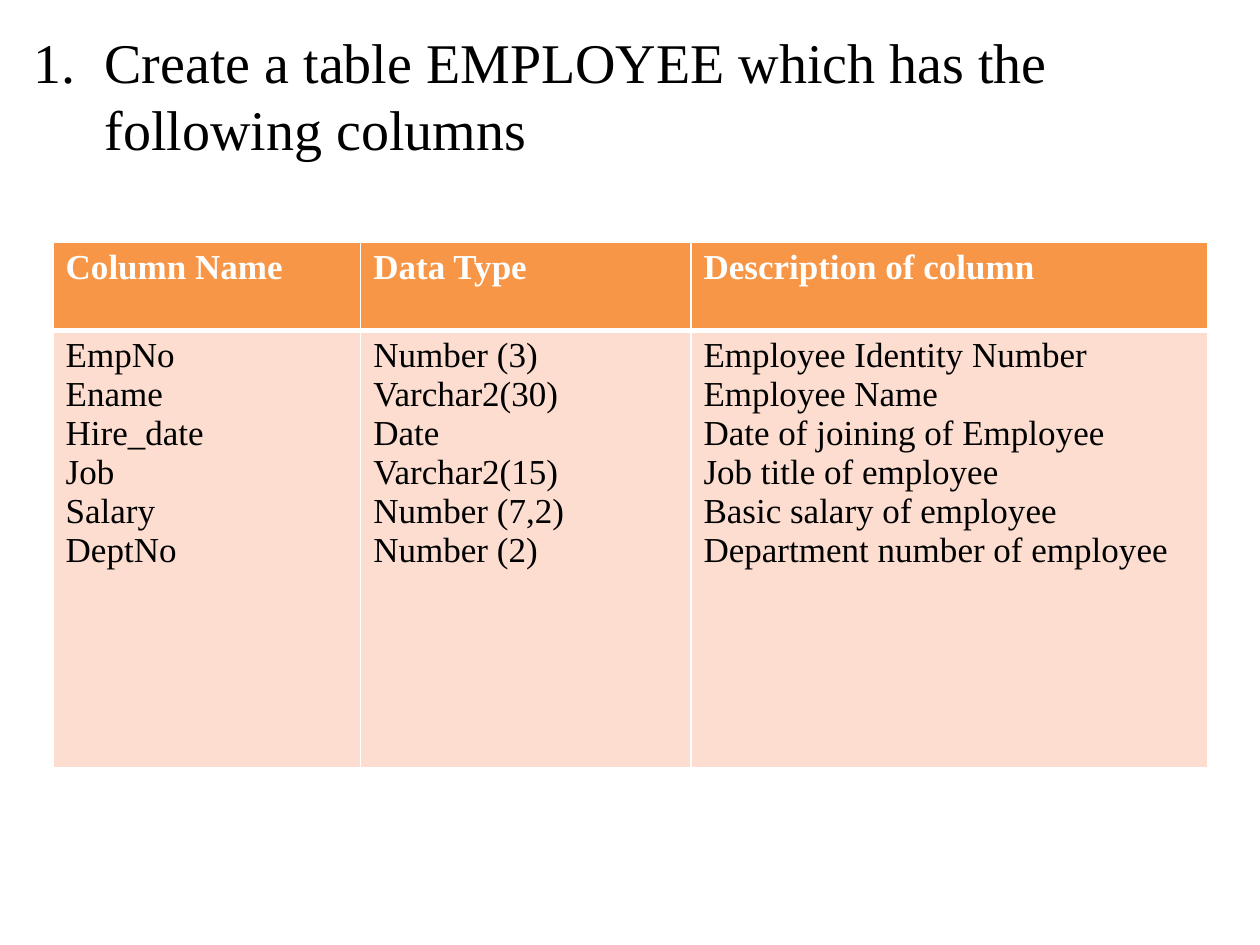
from lxml.etree import SubElement
from pptx import Presentation
from pptx.dml.color import RGBColor
from pptx.oxml.ns import qn
from pptx.util import Cm, Pt

FONT = "Times New Roman"
BLACK = RGBColor(0x00, 0x00, 0x00)
WHITE = RGBColor(0xFF, 0xFF, 0xFF)
ORANGE = RGBColor(0xF7, 0x96, 0x46)
PEACH = RGBColor(0xFC, 0xDD, 0xCF)

COLUMN_SHARES = (2.44, 2.62, 4.1)
HEADER_HEIGHT = Cm(1.78)
EMPLOYEE_COLUMNS = {
    "Column Name": ["EmpNo", "Ename", "Hire_date", "Job", "Salary", "DeptNo"],
    "Data Type": ["Number (3)", "Varchar2(30)", "Date", "Varchar2(15)",
                  "Number (7,2)", "Number (2)"],
    "Description of column": [
        "Employee Identity Number", "Employee Name",
        "Date of joining of Employee", "Job title of employee",
        "Basic salary of employee", "Department number of employee"],
}


def write_text(text_frame, lines, size=20, color=BLACK, bold=False):
    """Write one paragraph for each line."""
    for index, line in enumerate(lines):
        paragraph = text_frame.paragraphs[0] if index == 0 else text_frame.add_paragraph()
        run = paragraph.add_run()
        run.text = line
        run.font.name = FONT
        run.font.size = Pt(size)
        run.font.bold = bold
        run.font.color.rgb = color


def number_paragraph(paragraph, indent):
    """Give a paragraph an automatic number with a hanging indent."""
    properties = paragraph._p.get_or_add_pPr()
    properties.set("marL", str(indent))
    properties.set("indent", str(-indent))
    SubElement(properties, qn("a:buFont"), typeface=FONT)
    SubElement(properties, qn("a:buAutoNum"), type="arabicPeriod")


def set_borders(cell, color, bottom=1):
    """Draw the four cell borders; they precede the fill in the XML."""
    properties = cell._tc.get_or_add_tcPr()
    widths = {"a:lnL": 1, "a:lnR": 1, "a:lnT": 1, "a:lnB": bottom}
    for position, (tag, width) in enumerate(widths.items()):
        line = SubElement(properties, qn(tag), w=str(Pt(width)))
        fill = SubElement(line, qn("a:solidFill"))
        SubElement(fill, qn("a:srgbClr"), val=str(color))
        properties.insert(position, line)


def add_question(slide, left, top, width, height):
    text_box = slide.shapes.add_textbox(left, top, width, height)
    text_frame = text_box.text_frame
    text_frame.word_wrap = True
    write_text(text_frame,
               ["Create a table EMPLOYEE which has the following columns"], size=32)
    paragraph = text_frame.paragraphs[0]
    paragraph.space_before = Pt(6.4)
    number_paragraph(paragraph, Cm(1.43))


def add_column_table(slide, left, top, width, height):
    table = slide.shapes.add_table(
        2, len(EMPLOYEE_COLUMNS), left, top, width, height).table
    table.horz_banding = False
    table.rows[0].height = HEADER_HEIGHT
    table.rows[1].height = height - HEADER_HEIGHT
    for index, (heading, entries) in enumerate(EMPLOYEE_COLUMNS.items()):
        table.columns[index].width = int(width * COLUMN_SHARES[index] / sum(COLUMN_SHARES))
        header, body = table.cell(0, index), table.cell(1, index)
        write_text(header.text_frame, [heading], color=WHITE, bold=True)
        write_text(body.text_frame, entries)
        for cell, color in ((header, ORANGE), (body, PEACH)):
            cell.fill.solid()
            cell.fill.fore_color.rgb = color
        # Thick rule under the header, shared with the body cell's top edge
        set_borders(header, WHITE, bottom=3)
        set_borders(body, WHITE)
        top_line = body._tc.tcPr.find(qn("a:lnT"))
        top_line.set("w", str(Pt(3)))


def main():
    presentation = Presentation()
    presentation.slide_width, presentation.slide_height = Cm(25.4), Cm(19.05)
    slide = presentation.slides.add_slide(presentation.slide_layouts[6])
    # Numbered question
    add_question(slide, Cm(0.43), Cm(0.43), Cm(24.33), Cm(17.98))
    # Column definitions
    add_column_table(slide, Cm(1.07), Cm(4.88), Cm(23.28), Cm(10.6))
    presentation.save("out.pptx")


if __name__ == "__main__":
    main()
